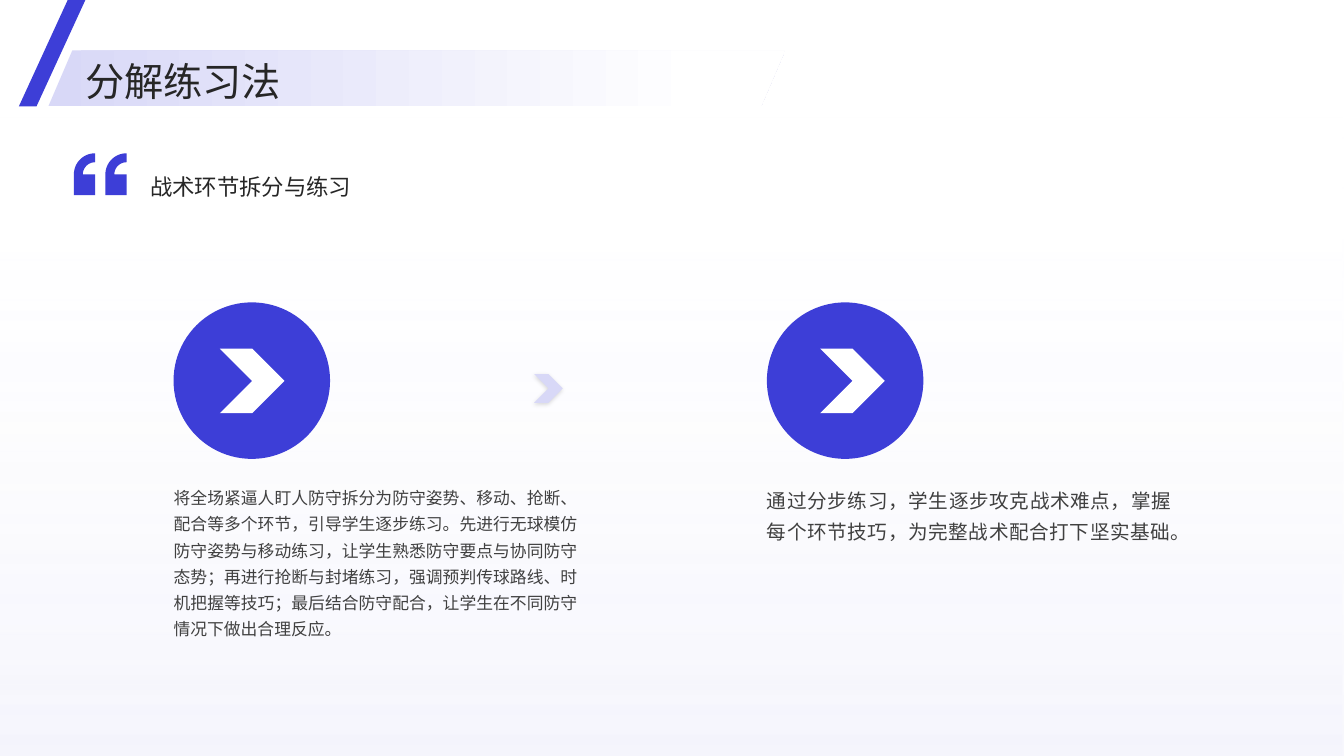
from dataclasses import dataclass
from math import cos, pi, sin

from lxml.etree import SubElement
from pptx import Presentation
from pptx.dml.color import RGBColor
from pptx.enum.shapes import MSO_SHAPE
from pptx.enum.text import MSO_ANCHOR, PP_ALIGN
from pptx.oxml.ns import qn
from pptx.util import Pt


@dataclass(frozen=True)
class Theme:
    font: str = "Noto Sans CJK SC"
    accent: RGBColor = RGBColor(0x3D, 0x3E, 0xD7)
    tint: RGBColor = RGBColor(0xD8, 0xD8, 0xF7)
    white: RGBColor = RGBColor(0xFF, 0xFF, 0xFF)
    heading: RGBColor = RGBColor(0x26, 0x26, 0x26)
    body: RGBColor = RGBColor(0x40, 0x40, 0x40)
    title_size: float = 28
    subtitle_size: float = 16
    step_size: float = 14
    small_step_size: float = 12


THEME = Theme()
WIDTH, HEIGHT = 960, 540

STEPS = [
    ("将全场紧逼人盯人防守拆分为防守姿势、移动、抢断、配合等多个环节，"
     "引导学生逐步练习。先进行无球模仿防守姿势与移动练习，让学生熟悉防守要点与协同防守态势；"
     "再进行抢断与封堵练习，强调预判传球路线、时机把握等技巧；"
     "最后结合防守配合，让学生在不同防守情况下做出合理反应。",
     THEME.small_step_size, 33),
    ("通过分步练习，学生逐步攻克战术难点，掌握每个环节技巧，为完整战术配合打下坚实基础。",
     THEME.step_size, 38),
]


def add_shape(slide, kind, left, top, width, height, color=None, slant=None):
    shape = slide.shapes.add_shape(kind, Pt(left), Pt(top), Pt(width), Pt(height))
    shape.shadow.inherit = False
    shape.line.fill.background()
    if color is not None:
        shape.fill.solid()
        shape.fill.fore_color.rgb = color
    if slant is not None:
        shape.adjustments[0] = slant
    return shape


def add_fade(shape, angle, end, opacities=None):
    """Fade from the tint to white; the angle runs counter-clockwise."""
    shape.fill.gradient()
    shape.fill.gradient_angle = angle
    stops = shape.fill.gradient_stops
    for stop, color, position in zip(stops, (THEME.tint, THEME.white), (0, end)):
        stop.color.rgb = color
        stop.position = position
    if opacities:
        colors = shape._element.spPr.iter(qn("a:srgbClr"))
        for color, opacity in zip(colors, opacities):
            SubElement(color, qn("a:alpha"), val=str(opacity * 1000))


def add_soft_shadow(shape):
    effects = shape._element.spPr.find(qn("a:effectLst"))
    shadow = SubElement(effects, qn("a:outerShdw"), blurRad=str(Pt(3)),
                        dist=str(Pt(1)), dir="5400000", algn="t", rotWithShape="0")
    color = SubElement(shadow, qn("a:srgbClr"), val="000000")
    SubElement(color, qn("a:alpha"), val="15000")


def add_text(slide, text, left, top, width, height, size, color, spacing,
             inset=0, anchor=MSO_ANCHOR.TOP, alignment=PP_ALIGN.LEFT):
    box = slide.shapes.add_textbox(Pt(left), Pt(top), Pt(width), Pt(height))
    frame = box.text_frame
    frame.word_wrap = True
    frame.vertical_anchor = anchor
    frame.margin_left = frame.margin_right = 0
    frame.margin_top = frame.margin_bottom = Pt(inset)
    paragraph = frame.paragraphs[0]
    paragraph.text = text
    paragraph.alignment = alignment
    paragraph.line_spacing = spacing
    font = paragraph.font
    font.size = Pt(size)
    font.name = THEME.font
    font.color.rgb = color
    properties = paragraph._p.pPr.find(qn("a:defRPr"))
    SubElement(properties, qn("a:ea"), typeface=THEME.font)


def add_background(slide):
    shape = add_shape(slide, MSO_SHAPE.RECTANGLE, 0, 0, WIDTH, HEIGHT)
    add_fade(shape, 90, 0.85, (25, 0))


def add_step(slide, left, top, text, size, arrow_offset):
    add_shape(slide, MSO_SHAPE.OVAL, left, top, 111.8, 111.8, THEME.accent)
    add_shape(slide, MSO_SHAPE.CHEVRON, left + arrow_offset, top + 33, 46.2, 46.2, THEME.white)
    add_text(slide, text, left, top + 125.3, 288.7, 126.7, size, THEME.body, 1.3,
             inset=3, alignment=PP_ALIGN.JUSTIFY)


def add_steps(slide, left, top, pitch):
    for index, (text, size, arrow_offset) in enumerate(STEPS):
        add_step(slide, left + index * pitch, top, text, size, arrow_offset)
    arrow = add_shape(slide, MSO_SHAPE.CHEVRON, left + 257.5, top + 51.2, 20.5, 20.5, THEME.tint)
    add_soft_shadow(arrow)


def add_quote_marks(slide, left, top):
    outer, inner, bottom, pitch, parts = 15.1, 8.7, 29.8, 22.5, 16
    angles = [pi / 2 * part / parts for part in range(parts + 1)]
    outline = [(outer - inner * sin(angle), outer - inner * cos(angle)) for angle in angles]
    outline += [(outer, outer), (outer, bottom), (0, bottom)]
    outline += [(outer - outer * cos(angle), outer - outer * sin(angle)) for angle in angles]
    builder = None
    for offset in (0, pitch):
        points = [(Pt(left + offset + x), Pt(top + y)) for x, y in outline]
        if builder is None:
            builder = slide.shapes.build_freeform(*points[0])
        else:
            builder.move_to(*points[0])
        builder.add_line_segments(points[1:], close=True)
    shape = builder.convert_to_shape()
    shape.shadow.inherit = False
    shape.line.fill.background()
    shape.fill.solid()
    shape.fill.fore_color.rgb = THEME.accent


def add_subtitle(slide, left, top, text):
    add_quote_marks(slide, left, top)
    add_text(slide, text, left + 54.5, top + 4.3, 775.4, 97.2,
             THEME.subtitle_size, THEME.heading, 1.5)


def add_title(slide, left, top, text):
    band = add_shape(slide, MSO_SHAPE.PARALLELOGRAM, left + 21, top + 36, 526.3, 40, slant=0.429)
    add_fade(band, 0, 0.89)
    add_text(slide, text, left + 47.5, top + 37.4, 846, 36.7, THEME.title_size,
             THEME.heading, 1.1, anchor=MSO_ANCHOR.MIDDLE)
    add_shape(slide, MSO_SHAPE.PARALLELOGRAM, left, top, 47.5, 76, THEME.accent, slant=0.735)


def main():
    presentation = Presentation()
    presentation.slide_width, presentation.slide_height = Pt(WIDTH), Pt(HEIGHT)
    slide = presentation.slides.add_slide(presentation.slide_layouts[6])
    add_background(slide)
    add_steps(slide, 124, 216, 423.8)
    add_subtitle(slide, 52.8, 109.5, "战术环节拆分与练习")
    add_title(slide, 13.5, 0, "分解练习法")
    presentation.save("out.pptx")


if __name__ == "__main__":
    main()
